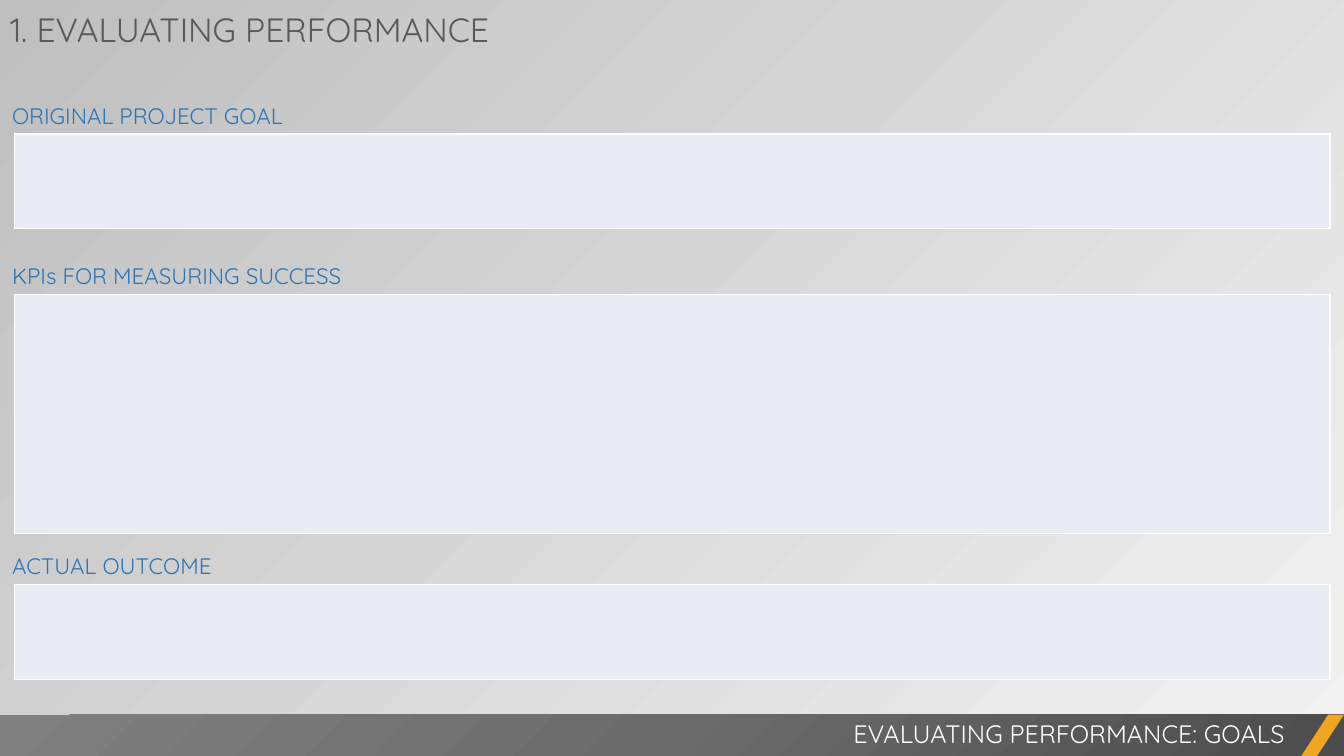
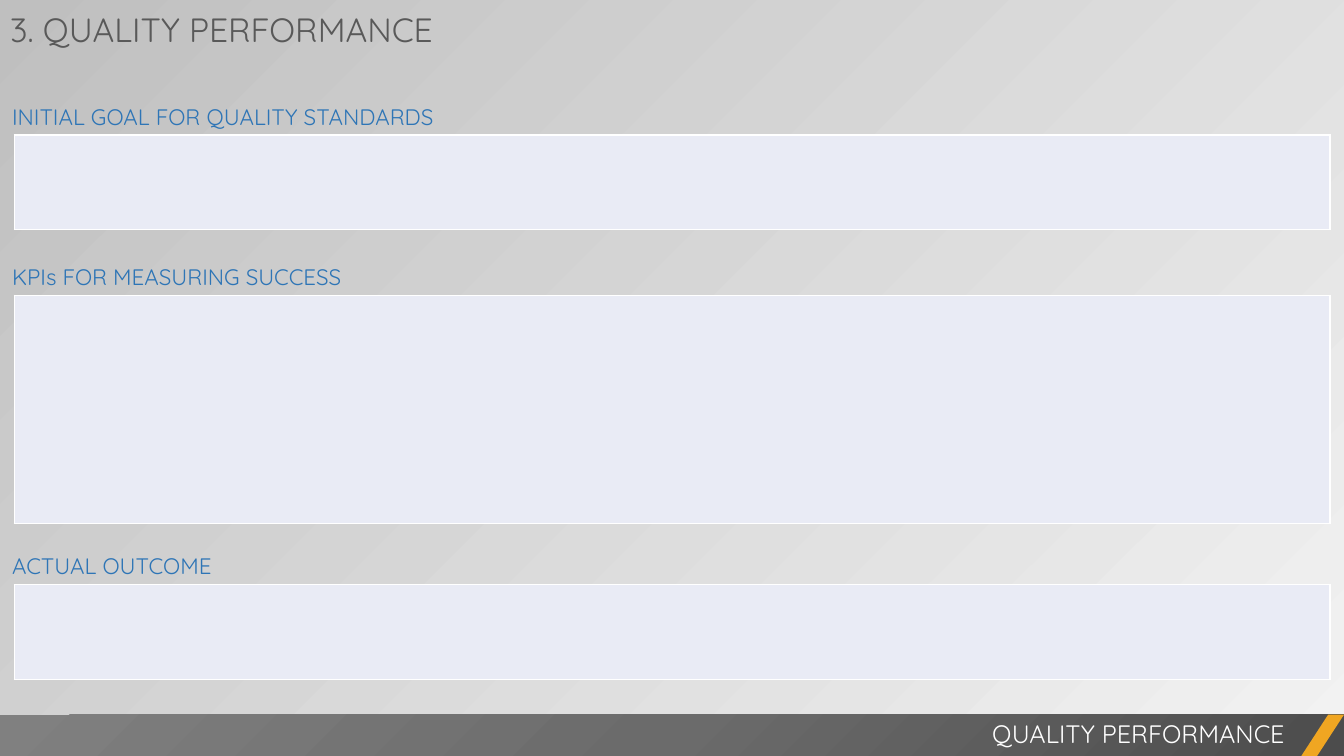
import pptx
import pptx.dml.color
import pptx.enum.shapes
import pptx.enum.text
import pptx.oxml
import pptx.oxml.ns
import pptx.util

RGBColor = pptx.dml.color.RGBColor
SHAPE = pptx.enum.shapes.MSO_SHAPE
ALIGN = pptx.enum.text.PP_ALIGN

PX = 9144
SLIDE_WIDTH, SLIDE_HEIGHT = 1333, 750
FONT = "Quicksand"
WHITE = RGBColor(0xFF, 0xFF, 0xFF)
TITLE_GRAY = RGBColor(0x59, 0x59, 0x59)
HEADING_BLUE = RGBColor(0x2E, 0x75, 0xB6)
PANEL_FILL = RGBColor(0xE9, 0xEB, 0xF5)
ACCENT_ORANGE = RGBColor(0xF0, 0xA6, 0x22)
PAGE_LIGHT = RGBColor(0xF2, 0xF2, 0xF2)
PAGE_DARK = RGBColor(0xBF, 0xBF, 0xBF)
BAND_STOPS = (
    (0, RGBColor(0x4C, 0x4C, 0x4C)),
    (50, RGBColor(0x6B, 0x6B, 0x6B)),
    (100, RGBColor(0x80, 0x80, 0x80)),
)

BAND_BOX = (0, 709, SLIDE_WIDTH, 42)
HEADING_HEIGHT = 40
HEADING_OFFSET = 41
PANEL_LEFT, PANEL_WIDTH = 14, 1305

PAGES = (
    ("1. EVALUATING PERFORMANCE", 523, "EVALUATING PERFORMANCE: GOALS", (
        ("ORIGINAL PROJECT GOAL", 337, 133, 94),
        ("KPIs FOR MEASURING SUCCESS", 531, 292, 237),
        ("ACTUAL OUTCOME", 337, 580, 94),
    )),
    ("3. QUALITY PERFORMANCE", 451, "QUALITY PERFORMANCE", (
        ("INITIAL GOAL FOR QUALITY STANDARDS", 558, 134, 94),
        ("KPIs FOR MEASURING SUCCESS", 531, 293, 226),
        ("ACTUAL OUTCOME", 337, 580, 94),
    )),
)


def emu(*lengths):
    return [length * PX for length in lengths]


def drawing_xml(tag, attributes, content):
    namespace = pptx.oxml.ns.nsdecls("a")
    return pptx.oxml.parse_xml(f"<a:{tag} {namespace} {attributes}>{content}</a:{tag}>")


def write_text(shape, text, size, color, align=ALIGN.LEFT, wrap=True):
    frame = shape.text_frame
    frame.word_wrap = wrap
    frame.auto_size = pptx.enum.text.MSO_AUTO_SIZE.SHAPE_TO_FIT_TEXT
    frame.vertical_anchor = pptx.enum.text.MSO_ANCHOR.TOP
    para = frame.paragraphs[0]
    para.alignment = align
    span = para.add_run()
    span.text = text
    span.font.name = FONT
    span.font.size = pptx.util.Pt(size)
    span.font.color.rgb = color
    return para


def paint_background(master):
    fill = master.background.fill
    fill.gradient()
    fill.gradient_angle = 135
    for stop, color in zip(fill.gradient_stops, (PAGE_LIGHT, PAGE_DARK)):
        stop.color.rgb = color
    light = master.element.find(".//" + pptx.oxml.ns.qn("a:srgbClr"))
    light.append(drawing_xml("alpha", 'val="40000"', ""))


def add_plain_shape(page, kind, box):
    shape = page.shapes.add_shape(kind, *emu(*box))
    shape.shadow.inherit = False
    shape.line.fill.background()
    return shape


def add_title(page, text, width):
    title = page.shapes.title
    title.left, title.top, title.width, title.height = emu(0, 4, width, 50)
    write_text(title, text, 24, TITLE_GRAY, wrap=False)


def add_panel(page, box):
    table = page.shapes.add_table(1, 1, *emu(*box)).table
    table.first_row = False
    table.horz_banding = False
    cell = table.cell(0, 0)
    cell.fill.solid()
    cell.fill.fore_color.rgb = PANEL_FILL
    properties = cell._tc.get_or_add_tcPr()
    line_fill = f'<a:solidFill><a:srgbClr val="{WHITE}"/></a:solidFill>'
    for index, side in enumerate(("lnL", "lnR", "lnT", "lnB")):
        properties.insert(index, drawing_xml(side, 'w="12700"', line_fill))


def add_section(page, heading, heading_width, top, height):
    add_panel(page, (PANEL_LEFT, top, PANEL_WIDTH, height))
    box = (0, top - HEADING_OFFSET, heading_width, HEADING_HEIGHT)
    label = page.shapes.add_textbox(*emu(*box))
    frame = label.text_frame
    frame.margin_left, frame.margin_top, frame.margin_right, frame.margin_bottom = emu(12, 6, 12, 6)
    para = write_text(label, heading, 16, HEADING_BLUE)
    para.line_spacing = pptx.util.Pt(21.5)
    para.space_before = pptx.util.Pt(3.2)


def add_footer(page, text, box):
    left, top, width, height = box
    band = add_plain_shape(page, SHAPE.RECTANGLE, box)
    band.fill.gradient()
    stops = "".join(
        f'<a:gs pos="{position * 1000}"><a:srgbClr val="{color}"/></a:gs>'
        for position, color in BAND_STOPS
    )
    gradient = drawing_xml(
        "gradFill", 'rotWithShape="1"',
        f'<a:gsLst>{stops}</a:gsLst><a:path path="circle">'
        '<a:fillToRect l="100000" t="100000"/></a:path>',
    )
    properties = band.element.spPr
    properties.replace(properties.find(pptx.oxml.ns.qn("a:gradFill")), gradient)

    slash = add_plain_shape(page, SHAPE.PARALLELOGRAM, (left + width - 43, top, 43, height))
    slash.adjustments[0] = 0.65
    slash.fill.solid()
    slash.fill.fore_color.rgb = ACCENT_ORANGE

    caption = page.shapes.add_textbox(*emu(left + 40, top - 1, width - 89, 40))
    write_text(caption, text, 18, WHITE, ALIGN.RIGHT)


def build_page(deck, title, title_width, footer, sections):
    page = deck.slides.add_slide(deck.slide_layouts[5])
    add_title(page, title, title_width)
    for section in sections:
        add_section(page, *section)
    add_footer(page, footer, BAND_BOX)


def main():
    deck = pptx.Presentation()
    deck.slide_width, deck.slide_height = emu(SLIDE_WIDTH, SLIDE_HEIGHT)
    paint_background(deck.slide_master)
    for content in PAGES:
        build_page(deck, *content)
    deck.save("out.pptx")


if __name__ == "__main__":
    main()
